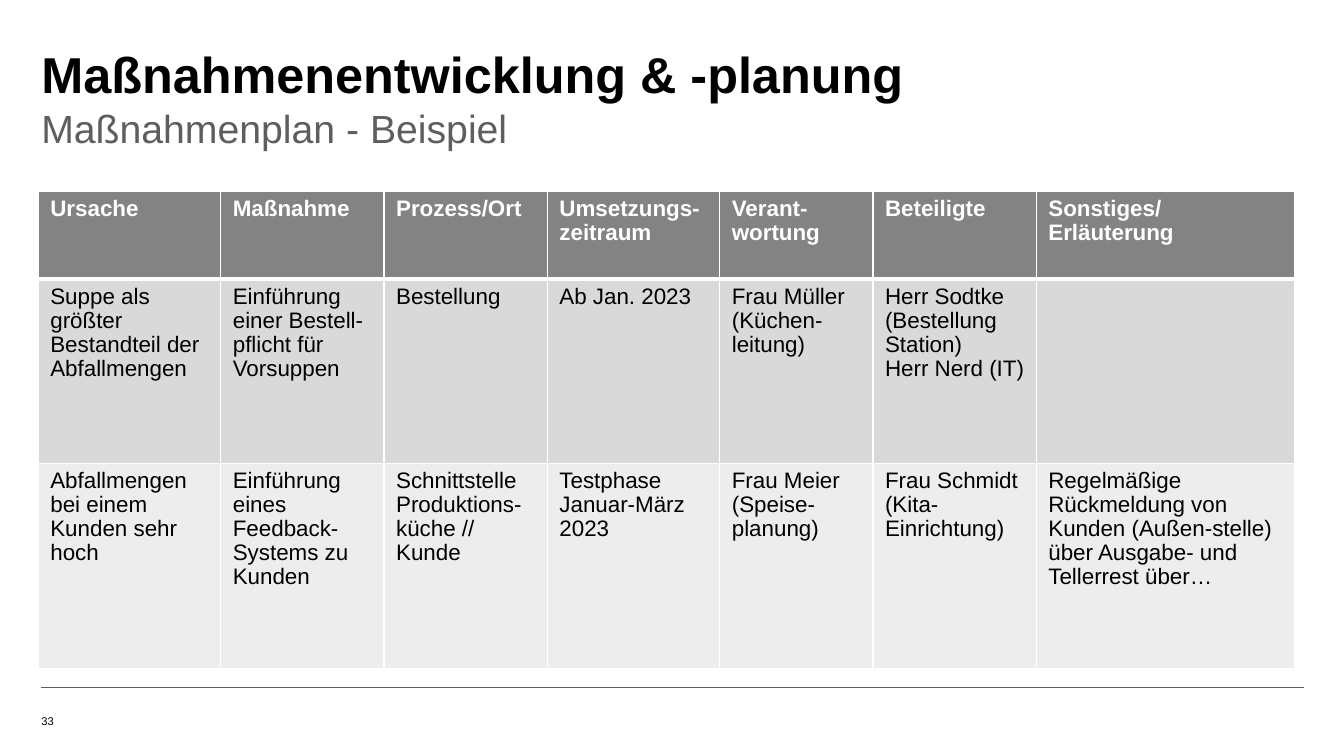
from dataclasses import dataclass

from lxml import etree
from pptx import Presentation
from pptx.dml.color import RGBColor
from pptx.enum.shapes import MSO_CONNECTOR
from pptx.enum.text import MSO_ANCHOR, MSO_AUTO_SIZE, PP_ALIGN
from pptx.oxml.ns import qn
from pptx.util import Inches, Pt

BLACK = RGBColor(0x00, 0x00, 0x00)
WHITE = RGBColor(0xFF, 0xFF, 0xFF)
GREY = RGBColor(0x5E, 0x5E, 0x5E)
HEADER_FILL = RGBColor(0x83, 0x83, 0x83)
DARK_BAND = RGBColor(0xD9, 0xD9, 0xD9)
LIGHT_BAND = RGBColor(0xED, 0xED, 0xED)

FONT = "Arial"
LEFT_ALIGN = PP_ALIGN.LEFT
BOTTOM = MSO_ANCHOR.BOTTOM
NO_AUTOFIT = MSO_AUTO_SIZE.NONE
STRAIGHT = MSO_CONNECTOR.STRAIGHT

MARGIN = 0.41
COLUMN_WIDTHS = (1.81, 1.62, 1.62, 1.71, 1.52, 1.62, 2.56)
THIN, THICK = 1, 3


@dataclass(frozen=True)
class PlanRow:
    height: float
    fill: RGBColor
    color: RGBColor
    bold: bool
    top: float
    bottom: float
    texts: tuple[str, ...]


ROWS = (
    PlanRow(0.87, HEADER_FILL, WHITE, True, THIN, THICK, (
        "Ursache", "Maßnahme", "Prozess/Ort", "Umsetzungs-zeitraum",
        "Verant-wortung", "Beteiligte", "Sonstiges/ Erläuterung")),
    PlanRow(1.83, DARK_BAND, BLACK, False, THICK, THIN, (
        "Suppe als größter Bestandteil der Abfallmengen",
        "Einführung einer Bestell-pflicht für Vorsuppen",
        "Bestellung", "Ab Jan. 2023", "Frau Müller (Küchen-leitung)",
        "Herr Sodtke (Bestellung Station)\nHerr Nerd (IT)", "")),
    PlanRow(2.03, LIGHT_BAND, BLACK, False, THIN, THIN, (
        "Abfallmengen bei einem Kunden sehr hoch",
        "Einführung eines Feedback-Systems zu Kunden",
        "Schnittstelle Produktions-küche // Kunde",
        "Testphase Januar-März 2023", "Frau Meier (Speise-planung)",
        "Frau Schmidt (Kita-Einrichtung)",
        "Regelmäßige Rückmeldung von Kunden (Außen-stelle) "
        "über Ausgabe- und Tellerrest über…")),
)


def format_paragraph(p, size: float, color: RGBColor, bold: bool = False) -> None:
    p.alignment = LEFT_ALIGN
    p.space_before = Pt(0)
    p.font.name = FONT
    p.font.size = Pt(size)
    p.font.bold = bold
    p.font.color.rgb = color


def fill_text(sp, text: str, box: tuple[float, float, float, float],
              size: float, color: RGBColor, bold: bool = False):
    """Place a shape and give it one bottom-anchored line without insets."""
    sp.left, sp.top, sp.width, sp.height = map(Inches, box)
    tf = sp.text_frame
    tf.text = text
    tf.word_wrap = True
    tf.auto_size = NO_AUTOFIT
    tf.vertical_anchor = BOTTOM
    tf.margin_left = tf.margin_top = tf.margin_right = tf.margin_bottom = 0
    p = tf.paragraphs[0]
    format_paragraph(p, size, color, bold)
    return p


def remove_bullet(p) -> None:
    props = p._p.get_or_add_pPr()
    props.set("marL", "0")
    props.set("indent", "0")
    etree.SubElement(props, qn("a:buNone"))


def set_borders(cell, top: float, bottom: float) -> None:
    """Add white cell borders, widths in points, ahead of the fill."""
    props = cell._tc.get_or_add_tcPr()
    sides = (("L", THIN), ("R", THIN), ("T", top), ("B", bottom))
    for position, (side, width) in enumerate(sides):
        line = etree.Element(qn(f"a:ln{side}"), w=str(Pt(width)))
        solid = etree.SubElement(line, qn("a:solidFill"))
        etree.SubElement(solid, qn("a:srgbClr"), val=str(WHITE))
        props.insert(position, line)


def add_plan_table(slide) -> None:
    table = slide.shapes.add_table(
        len(ROWS), len(COLUMN_WIDTHS), Inches(0.38), Inches(1.9),
        Inches(sum(COLUMN_WIDTHS)), Inches(sum(row.height for row in ROWS))).table
    for column, width in zip(table.columns, COLUMN_WIDTHS):
        column.width = Inches(width)
    for table_row, row in zip(table.rows, ROWS):
        table_row.height = Inches(row.height)
        for cell, text in zip(table_row.cells, row.texts):
            cell.margin_left = cell.margin_right = Inches(0.12)
            cell.margin_top = cell.margin_bottom = Inches(0.06)
            cell.fill.solid()
            cell.fill.fore_color.rgb = row.fill
            set_borders(cell, row.top, row.bottom)
            cell.text = text
            for p in cell.text_frame.paragraphs:
                format_paragraph(p, 16, row.color, row.bold)
                p.line_spacing = 0.96


def add_footer(slide) -> None:
    rule = slide.shapes.add_connector(
        STRAIGHT, Inches(MARGIN), Inches(6.82), Inches(12.93), Inches(6.82))
    rule.line.color.rgb = GREY
    rule.line.width = Pt(0.5)
    etree.SubElement(rule._element.spPr, qn("a:effectLst"))
    number = slide.shapes.add_textbox(0, 0, 0, 0)
    fill_text(number, "33", (MARGIN, 6.9, 1.57, 0.32), 8, BLACK)


def main() -> None:
    prs = Presentation()
    prs.slide_width, prs.slide_height = Inches(13.33), Inches(7.5)
    slide = prs.slides.add_slide(prs.slide_layouts[1])
    add_footer(slide)
    fill_text(slide.shapes.title, "Maßnahmenentwicklung & -planung",
              (MARGIN, 0.41, 9.65, 0.62), 36, BLACK, True)
    subtitle = fill_text(slide.placeholders[1], "Maßnahmenplan - Beispiel",
                         (MARGIN, 0.95, 9.65, 0.55), 28, GREY)
    subtitle.line_spacing = 1.1
    # The bullet setting must precede the default run properties.
    remove_bullet(subtitle)
    props = subtitle._p.get_or_add_pPr()
    props.append(props.find(qn("a:defRPr")))
    add_plan_table(slide)
    prs.save("out.pptx")


if __name__ == "__main__":
    main()
